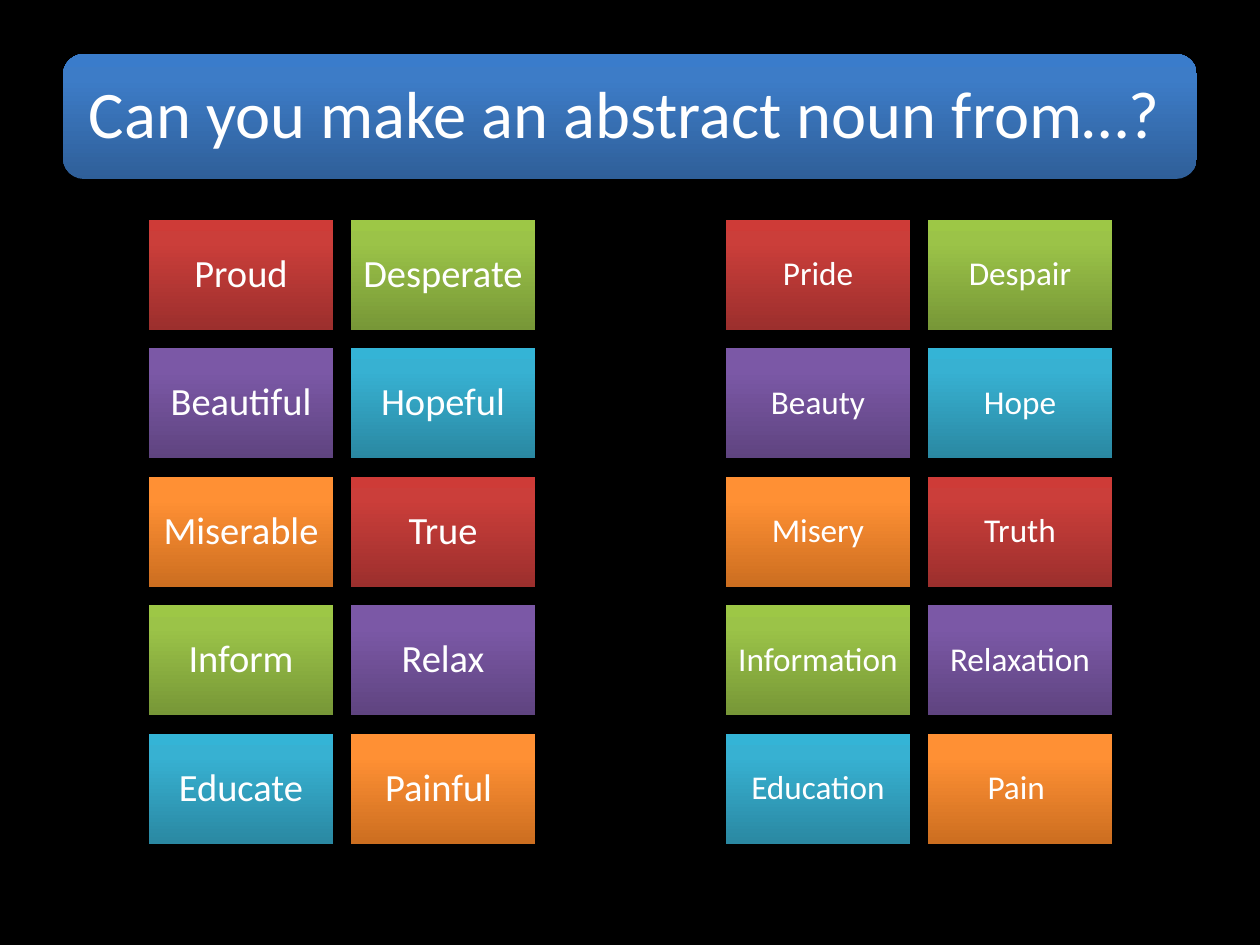
from copy import deepcopy

from pptx import Presentation
from pptx.dml.color import RGBColor
from pptx.enum.shapes import MSO_SHAPE
from pptx.enum.text import MSO_ANCHOR, MSO_AUTO_SIZE, PP_ALIGN
from pptx.oxml.ns import qn
from pptx.util import Emu, Pt

RECTANGLE, ROUNDED = MSO_SHAPE.RECTANGLE, MSO_SHAPE.ROUNDED_RECTANGLE
LEFT, CENTER = PP_ALIGN.LEFT, PP_ALIGN.CENTER
TITLE_ONLY = 5

HEADING = "Can you make an abstract noun from…?"
WORDS = ["Proud", "Desperate", "Beautiful", "Hopeful", "Miserable",
         "True", "Inform", "Relax", "Educate", "Painful "]
NOUNS = ["Pride", "Despair", "Beauty", "Hope", "Misery",
         "Truth", "Information", "Relaxation", "Education", "Pain "]

# Gradients run from the bottom edge to the top edge.
THEME = {
    "font": "Calibri",
    "background": "000000",
    "text": "FFFFFF",
    "banner": ("2F5F99", "3D7CC7", "3A7CCB"),
    "tiles": [
        ("9C2F2D", "CB3E3A", "CE3B37"),
        ("779737", "9BC348", "9DC746"),
        ("5F4480", "7B58A6", "7C57A8"),
        ("2A88A2", "37B1D2", "34B4D6"),
        ("CC6E20", "FF9034", "FF9136"),
    ],
    "heading_size": 38,
    "word_size": 22,
    "noun_size": 19,
}
STOP_POSITIONS = (0, 0.8, 1)

# Lengths in px, 126 to the inch
SLIDE = (1260, 945)
BANNER = (63, 54, 1134, 125)
BANNER_PADDING = 6
HEADING_INSET = 20
TILE_WIDTH, TILE_HEIGHT = 184, 110
COLUMNS, COLUMN_GAP = 2, 18
GRID_TOP, GRID_HEIGHT = 220, 624
# words, left edge, text size, text inset
GRIDS = [
    (WORDS, 149, THEME["word_size"], 11),
    (NOUNS, 726, THEME["noun_size"], 10),
]


def px(length):
    return Emu(round(length * 914400 / 126))


def rgb(value):
    return RGBColor.from_string(value)


def add_panel(slide, preset, box, colours):
    panel = slide.shapes.add_shape(preset, *map(px, box))
    panel.shadow.inherit = False
    panel.line.fill.background()
    panel.fill.gradient()
    panel.fill.gradient_angle = 90
    stop_list = panel._element.spPr.find(".//" + qn("a:gsLst"))
    stop_list.append(deepcopy(stop_list[-1]))
    for stop, position, colour in zip(panel.fill.gradient_stops, STOP_POSITIONS, colours):
        stop.position = position
        stop.color.rgb = rgb(colour)
    return panel


def write(shape, text, size, inset, alignment):
    frame = shape.text_frame
    frame.text = text
    frame.word_wrap = True
    frame.auto_size = MSO_AUTO_SIZE.NONE
    frame.vertical_anchor = MSO_ANCHOR.MIDDLE
    frame.margin_left = frame.margin_right = px(inset)
    frame.margin_top = frame.margin_bottom = px(inset)
    paragraph = frame.paragraphs[0]
    paragraph.alignment = alignment
    paragraph.line_spacing = 0.9
    paragraph.font.name = THEME["font"]
    paragraph.font.size = Pt(size)
    paragraph.font.color.rgb = rgb(THEME["text"])


def add_heading(slide):
    banner = add_panel(slide, ROUNDED, BANNER, THEME["banner"])
    left, top, width, height = BANNER
    title = slide.shapes.title
    title.left, title.top = px(left + BANNER_PADDING), px(top + BANNER_PADDING)
    title.width = px(width - 2 * BANNER_PADDING)
    title.height = px(height - 2 * BANNER_PADDING)
    write(title, HEADING, THEME["heading_size"], HEADING_INSET, LEFT)
    banner._element.addnext(title._element)


def add_grid(slide, words, left, size, inset):
    rows = len(words) // COLUMNS
    row_step = TILE_HEIGHT + (GRID_HEIGHT - rows * TILE_HEIGHT) / (rows - 1)
    for index, word in enumerate(words):
        row, column = divmod(index, COLUMNS)
        box = (left + column * (TILE_WIDTH + COLUMN_GAP),
               GRID_TOP + row * row_step, TILE_WIDTH, TILE_HEIGHT)
        colours = THEME["tiles"][index % len(THEME["tiles"])]
        tile = add_panel(slide, RECTANGLE, box, colours)
        write(tile, word, size, inset, CENTER)


def main():
    deck = Presentation()
    deck.slide_width, deck.slide_height = map(px, SLIDE)
    slide = deck.slides.add_slide(deck.slide_layouts[TITLE_ONLY])
    slide.background.fill.solid()
    slide.background.fill.fore_color.rgb = rgb(THEME["background"])
    add_heading(slide)
    for grid in GRIDS:
        add_grid(slide, *grid)
    deck.save("out.pptx")


if __name__ == "__main__":
    main()
